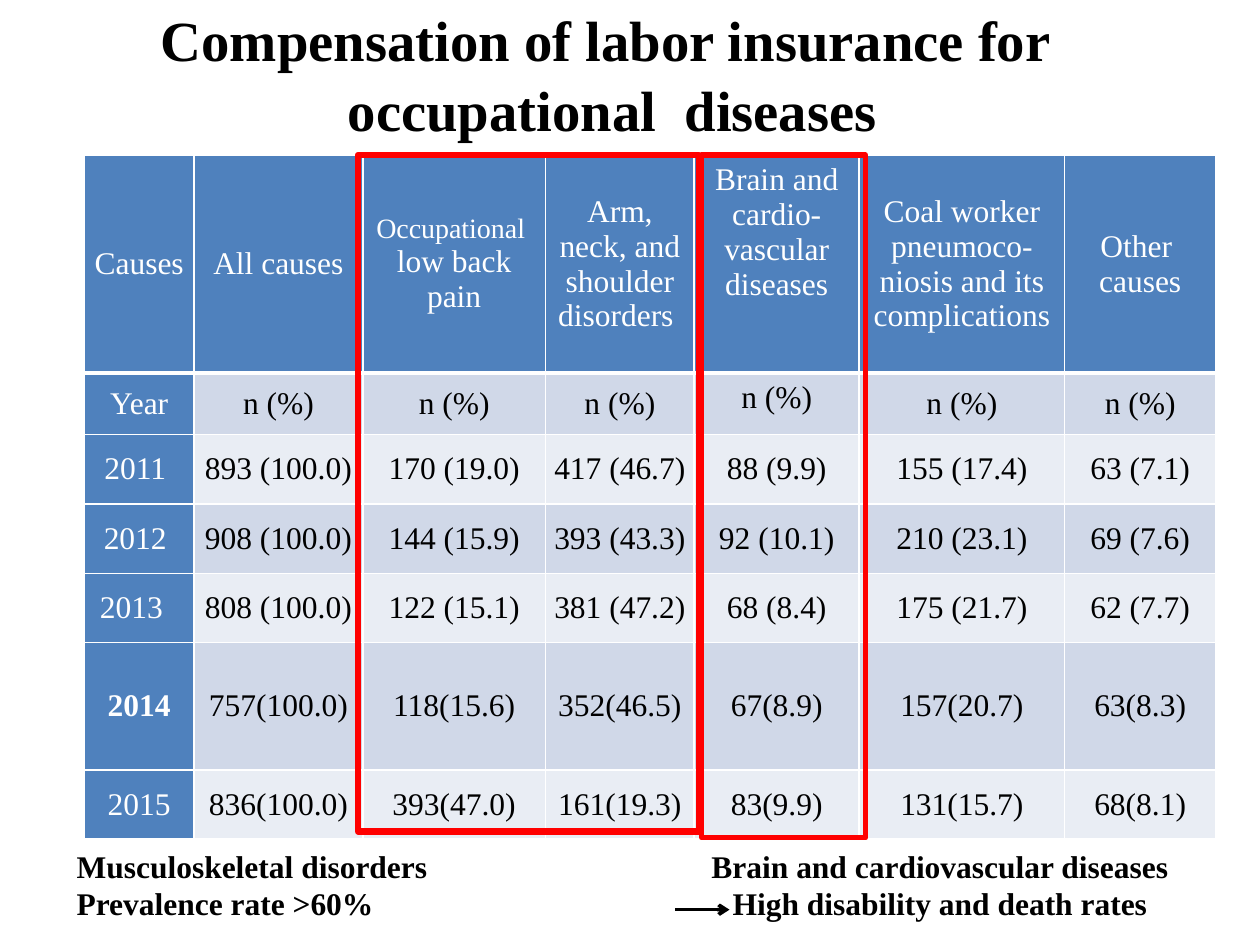
from dataclasses import dataclass

import pptx
import pptx.dml.color
import pptx.enum.dml
import pptx.enum.shapes
import pptx.enum.text
import pptx.oxml
import pptx.oxml.ns
import pptx.util
from pptx.util import Inches, Pt

ALIGN = pptx.enum.text.PP_ALIGN
ANCHOR = pptx.enum.text.MSO_ANCHOR


@dataclass(frozen=True)
class Theme:
    font: str = "Times New Roman"
    ink: str = "000000"
    paper: str = "FFFFFF"
    header: str = "4F81BD"
    bands: tuple = ("D0D8E8", "E9EDF4")
    highlight: str = "FF0000"
    title: float = 32.4
    body: float = 18
    small: float = 16


THEME = Theme()

HEADINGS = ["Causes", "All causes", "Occupational \nlow back pain",
            "Arm, neck, and shoulder disorders ",
            "Brain and cardio-vascular diseases",
            "Coal worker pneumoco-niosis and its complications",
            "Other \ncauses"]
CLAIMS = [
    ["Year"] + ["n (%)"] * 6,
    ["2011 ", "893 (100.0)", "170 (19.0)", "417 (46.7)", "88 (9.9)", "155 (17.4)", "63 (7.1)"],
    ["2012 ", "908 (100.0)", "144 (15.9)", "393 (43.3)", "92 (10.1)", "210 (23.1)", "69 (7.6)"],
    ["2013  ", "808 (100.0)", "122 (15.1)", "381 (47.2)", "68 (8.4)", "175 (21.7)", "62 (7.7)"],
    ["2014", "757(100.0)", "118(15.6)", "352(46.5)", "67(8.9)", "157(20.7)", "63(8.3)"],
    ["2015", "836(100.0)", "393(47.0)", "161(19.3)", "83(9.9)", "131(15.7)", "68(8.1)"],
]
COLUMN_WIDTHS = [0.87, 1.34, 1.45, 1.18, 1.31, 1.63, 1.2]
ROW_HEIGHTS = [1.73, 0.49, 0.55, 0.55, 0.55, 1.01, 0.55]
BRAIN_COLUMN = 4


def rgb(color):
    return pptx.dml.color.RGBColor.from_string(color)


def write(frame, text, size, color=THEME.ink, bold=False, align=ALIGN.CENTER):
    frame.text = text
    frame.word_wrap = True
    for paragraph in frame.paragraphs:
        paragraph.alignment = align
        for run in paragraph.runs:
            run.font.name = THEME.font
            run.font.size = Pt(size)
            run.font.bold = bold
            run.font.color.rgb = rgb(color)


def add_title(slide, left, top, width, height):
    frame = slide.shapes.add_textbox(left, top, width, height).text_frame
    frame.vertical_anchor = ANCHOR.MIDDLE
    write(frame, "Compensation of labor insurance for \voccupational  diseases",
          THEME.title, bold=True)
    frame.paragraphs[0].line_spacing = 1.04


def add_cell_borders(cell, bottom_width):
    properties = cell._tc.get_or_add_tcPr()
    widths = {"lnL": 1, "lnR": 1, "lnT": 1, "lnB": bottom_width}
    for position, (side, width) in enumerate(widths.items()):
        properties.insert(position, pptx.oxml.parse_xml(
            f'<a:{side} {pptx.oxml.ns.nsdecls("a")} w="{Pt(width)}"><a:solidFill>'
            f'<a:srgbClr val="{THEME.paper}"/></a:solidFill></a:{side}>'))


def add_claims_table(slide, left, top):
    rows = [HEADINGS] + CLAIMS
    table = slide.shapes.add_table(
        len(rows), len(HEADINGS), left, top,
        Inches(sum(COLUMN_WIDTHS)), Inches(sum(ROW_HEIGHTS))).table
    for column, width in zip(table.columns, COLUMN_WIDTHS):
        column.width = Inches(width)
    for row, height in zip(table.rows, ROW_HEIGHTS):
        row.height = Inches(height)

    for r, texts in enumerate(rows):
        for c, text in enumerate(texts):
            cell = table.cell(r, c)
            is_header = r == 0 or c == 0
            cell.margin_left = cell.margin_right = Inches(0.06)
            cell.margin_top = cell.margin_bottom = Inches(0.06)
            top_aligned = c == BRAIN_COLUMN and r < 2
            cell.vertical_anchor = ANCHOR.TOP if top_aligned else ANCHOR.MIDDLE
            cell.fill.solid()
            cell.fill.fore_color.rgb = rgb(THEME.header if is_header else THEME.bands[(r - 1) % 2])
            write(cell.text_frame, text, THEME.body,
                  THEME.paper if is_header else THEME.ink, bold=text == "2014")
            add_cell_borders(cell, 3 if r == 0 else 1)
    occupational = table.cell(0, 2).text_frame.paragraphs[0]
    occupational.runs[0].font.size = Pt(THEME.small)


def add_highlight(slide, left, top, width, height, weight):
    """Outline a group of table columns."""
    frame = slide.shapes.add_shape(
        pptx.enum.shapes.MSO_SHAPE.RECTANGLE, left, top, width, height)
    frame.shadow.inherit = False
    frame.fill.background()
    frame.line.color.rgb = rgb(THEME.highlight)
    frame.line.width = Pt(weight)


def add_finding(slide, left, top, width, height, text, align):
    finding = slide.shapes.add_textbox(left, top, width, height)
    finding.fill.solid()
    finding.fill.fore_color.rgb = rgb(THEME.paper)
    write(finding.text_frame, text, THEME.body, bold=True, align=align)


def add_arrow(slide, left, top, width):
    arrow = slide.shapes.add_connector(
        pptx.enum.shapes.MSO_CONNECTOR.STRAIGHT, left, top, left + width, top)
    arrow.line.color.rgb = rgb(THEME.ink)
    arrow.line.width = Pt(2)
    namespace = pptx.oxml.ns.nsdecls("a")
    arrow.line._get_or_add_ln().append(
        pptx.oxml.parse_xml(f'<a:tailEnd {namespace} type="arrow"/>'))
    arrow._element.spPr.append(pptx.oxml.parse_xml(f"<a:effectLst {namespace}/>"))


def add_findings(slide, left, top):
    add_finding(slide, left, top, Inches(4.66), Inches(0.71),
                "Musculoskeletal disorders\nPrevalence rate >60%", ALIGN.LEFT)
    add_finding(slide, left + Inches(4.41), top, Inches(5.08), Inches(0.83),
                "Brain and cardiovascular diseases\nHigh disability and death rates",
                ALIGN.CENTER)
    add_arrow(slide, left + Inches(4.85), top + Inches(0.55), Inches(0.43))


def main():
    presentation = pptx.Presentation()
    presentation.slide_width = Inches(10)
    presentation.slide_height = Inches(7.5)
    slide = presentation.slides.add_slide(presentation.slide_layouts[6])

    table_top = Inches(1.23)
    add_title(slide, Inches(-0.28), Inches(0.14), Inches(10.28), Inches(0.87))
    add_claims_table(slide, Inches(0.67), table_top)
    add_highlight(slide, Inches(2.84), table_top, Inches(2.71), Inches(5.37), 3.5)
    add_findings(slide, Inches(0.51), Inches(6.67))
    add_highlight(slide, Inches(5.57), table_top, Inches(1.3), Inches(5.42), 3)
    presentation.save("out.pptx")


if __name__ == "__main__":
    main()
